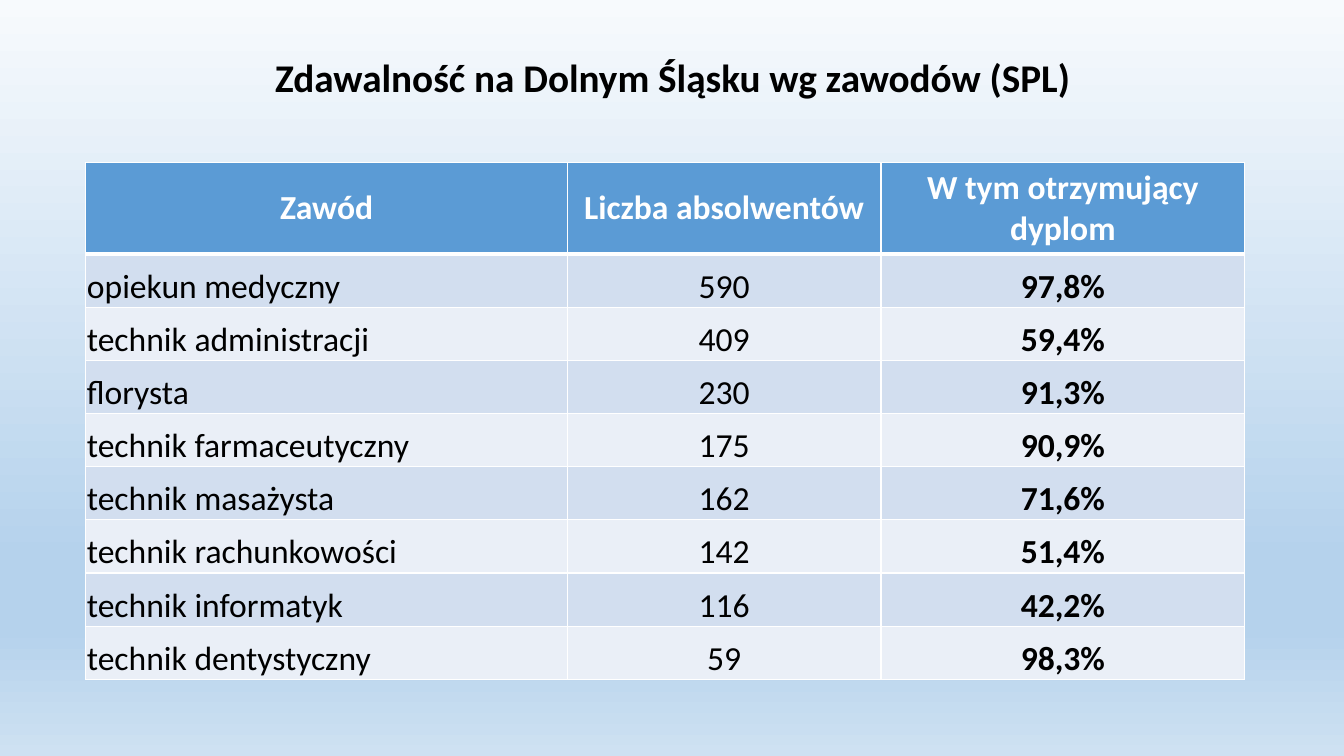
from lxml import etree
from pptx import Presentation
from pptx.dml.color import RGBColor
from pptx.enum import text
from pptx.oxml import ns
from pptx.util import Cm, Pt

FONT = "Calibri"
BLACK = RGBColor(0x00, 0x00, 0x00)
WHITE = RGBColor(0xFF, 0xFF, 0xFF)
HEADER_BLUE = RGBColor(0x5B, 0x9B, 0xD5)
BAND_DARK = RGBColor(0xD2, 0xDE, 0xEF)
BAND_LIGHT = RGBColor(0xEA, 0xEF, 0xF7)
SKY_PALE = RGBColor(0xF7, 0xFA, 0xFD)
SKY_BLUE = RGBColor(0xB5, 0xD2, 0xEC)
SKY_LOW = RGBColor(0xCE, 0xE1, 0xF2)
SKY_STOPS = [(0, SKY_PALE), (74, SKY_BLUE), (83, SKY_BLUE), (100, SKY_LOW)]

TITLE = "Zdawalność na Dolnym Śląsku wg zawodów (SPL)"
HEADERS = ("Zawód", "Liczba absolwentów", "W tym otrzymujący dyplom")
RESULTS = [
    ("opiekun medyczny", "590", "97,8%"),
    ("technik administracji", "409", "59,4%"),
    ("florysta", "230", "91,3%"),
    ("technik farmaceutyczny", "175", "90,9%"),
    ("technik masażysta", "162", "71,6%"),
    ("technik rachunkowości", "142", "51,4%"),
    ("technik informatyk", "116", "42,2%"),
    ("technik dentystyczny", "59", "98,3%"),
]
COLUMN_WIDTHS = (Cm(12.14), Cm(7.9), Cm(9.17))
HEADER_HEIGHT = Cm(2.31)
ROW_HEIGHT = Cm(1.34)


def add_child(parent, tag, **attributes):
    """Append a DrawingML element to its parent."""
    return etree.SubElement(parent, ns.qn(tag), attributes)


def paint_background(slide):
    """Fill the slide with the vertical sky gradient."""
    fill = slide.background.fill
    fill.gradient()
    fill.gradient_angle = 270
    stops = next(slide.element.iter(ns.qn("a:gsLst")))
    for stop in list(stops):
        stops.remove(stop)
    for percent, color in SKY_STOPS:
        stop = add_child(stops, "a:gs", pos=str(percent * 1000))
        add_child(stop, "a:srgbClr", val=str(color))


def write_text(frame, content, size, color, bold, alignment):
    """Write one formatted run into the first paragraph."""
    frame.word_wrap = True
    paragraph = frame.paragraphs[0]
    paragraph.alignment = alignment
    run = paragraph.add_run()
    run.text = content
    run.font.name = FONT
    run.font.size = Pt(size)
    run.font.bold = bold
    run.font.color.rgb = color
    return paragraph


def add_title(slide):
    """Add the centred slide title."""
    box = slide.shapes.add_textbox(Cm(2.34), Cm(1.02), Cm(29.21), Cm(1.96))
    frame = box.text_frame
    frame.vertical_anchor = text.MSO_ANCHOR.MIDDLE
    paragraph = write_text(frame, TITLE, 28, BLACK, True, text.PP_ALIGN.CENTER)
    paragraph.line_spacing = 0.9


def set_borders(cell, top, bottom):
    """Draw white borders with the given top and bottom widths."""
    properties = cell._tc.get_or_add_tcPr()
    widths = {"a:lnL": 1, "a:lnR": 1, "a:lnT": top, "a:lnB": bottom}
    for tag, width in widths.items():
        line = add_child(properties, tag, w=str(Pt(width)))
        add_child(add_child(line, "a:solidFill"), "a:srgbClr", val=str(WHITE))


def fill_cell(cell, color, top=1, bottom=1):
    """Give a cell its borders and background."""
    set_borders(cell, top, bottom)
    cell.fill.solid()
    cell.fill.fore_color.rgb = color


def write_header(table):
    """Fill the header row."""
    for cell, label in zip(table.rows[0].cells, HEADERS):
        fill_cell(cell, HEADER_BLUE, bottom=3)
        cell.vertical_anchor = text.MSO_ANCHOR.MIDDLE
        write_text(cell.text_frame, label, 24, WHITE, True, text.PP_ALIGN.CENTER)


def write_result(table, index, result):
    """Fill one banded row with a profession and its figures."""
    for column, value in enumerate(result):
        cell = table.cell(index, column)
        fill_cell(cell, BAND_DARK if index % 2 else BAND_LIGHT, top=3 if index == 1 else 1)
        cell.vertical_anchor = text.MSO_ANCHOR.BOTTOM
        cell.margin_left = cell.margin_right = cell.margin_top = Cm(0.03)
        cell.margin_bottom = 0
        alignment = text.PP_ALIGN.CENTER if column else text.PP_ALIGN.LEFT
        write_text(cell.text_frame, value, 24, BLACK, column == 2, alignment)


def add_results_table(slide):
    """Add the table of pass rates by profession."""
    height = HEADER_HEIGHT + len(RESULTS) * ROW_HEIGHT
    frame = slide.shapes.add_table(
        len(RESULTS) + 1, len(HEADERS), Cm(2.16), Cm(4.09), sum(COLUMN_WIDTHS), height
    )
    table = frame.table
    for column, width in zip(table.columns, COLUMN_WIDTHS):
        column.width = width
    for row in table.rows:
        row.height = ROW_HEIGHT
    table.rows[0].height = HEADER_HEIGHT
    write_header(table)
    for index, result in enumerate(RESULTS, start=1):
        write_result(table, index, result)


def main():
    """Build and save the presentation."""
    presentation = Presentation()
    presentation.slide_width = Cm(33.87)
    presentation.slide_height = Cm(19.05)
    slide = presentation.slides.add_slide(presentation.slide_layouts[6])
    paint_background(slide)
    add_title(slide)
    add_results_table(slide)
    presentation.save("out.pptx")


if __name__ == "__main__":
    main()
